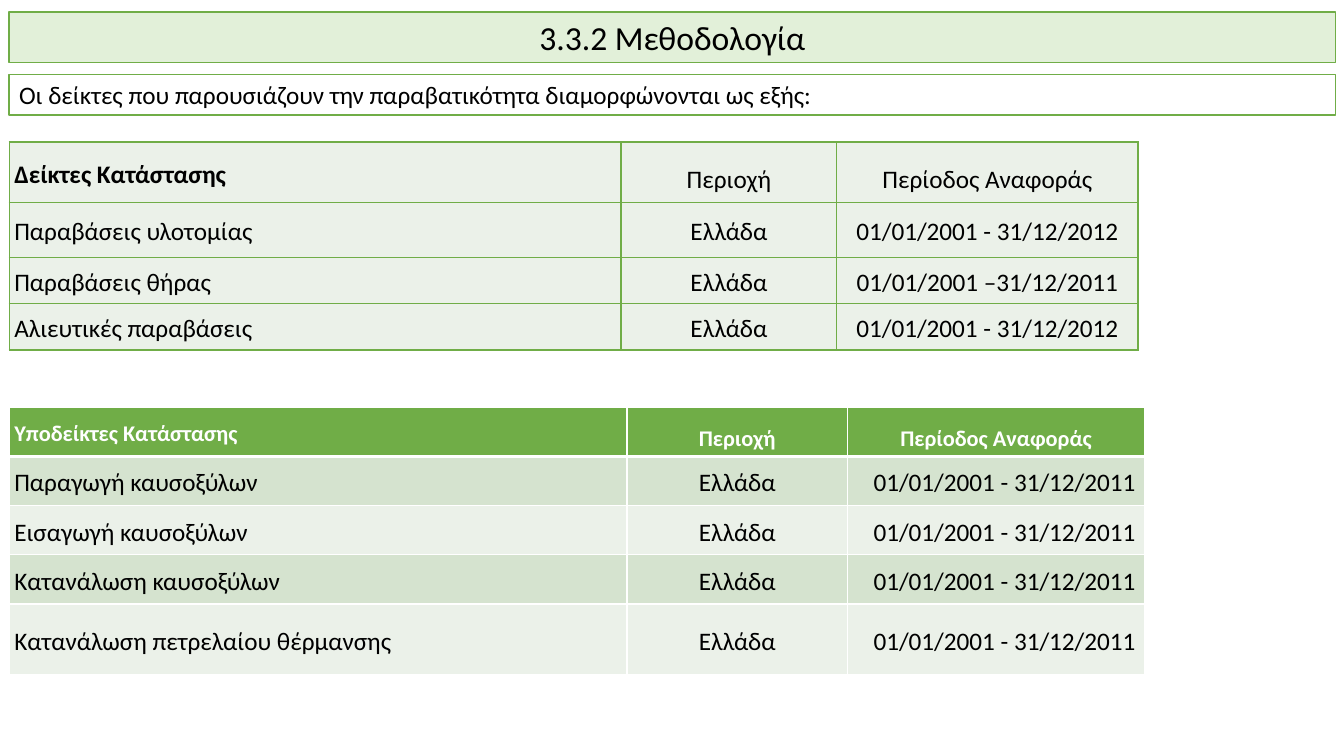
from dataclasses import dataclass

from lxml.etree import SubElement
from pptx import Presentation
from pptx.dml.color import RGBColor as RGB
from pptx.enum.text import MSO_ANCHOR as Anchor, MSO_AUTO_SIZE as AutoSize, PP_ALIGN as Align
from pptx.oxml.ns import qn
from pptx.util import Cm, Pt


@dataclass(frozen=True)
class Theme:
    font: str = "Calibri"
    green: str = "70AD47"
    title_fill: str = "E2F0D9"
    pale: str = "EBF1E9"
    band: str = "D5E3CF"
    white: str = "FFFFFF"
    black: str = "000000"
    title_size: int = 24
    body_size: int = 18
    header_size: int = 16


THEME = Theme()
LEFT = 0.23
CELL_INSET = 0.13


def write(frame, text, size=THEME.body_size, color=THEME.black, bold=False,
          align=Align.LEFT, spacing=None):
    frame.word_wrap = True
    paragraph = frame.paragraphs[0]
    paragraph.alignment = align
    paragraph.line_spacing = spacing
    run = paragraph.add_run()
    run.text = text
    run.font.name = THEME.font
    run.font.size = Pt(size)
    run.font.bold = bold
    run.font.color.rgb = RGB.from_string(color)


def border(cell, side, color, width):
    line = SubElement(cell._tc.get_or_add_tcPr(), qn(f"a:ln{side}"), w=str(Pt(width)))
    fill = SubElement(line, qn("a:solidFill"))
    SubElement(fill, qn("a:srgbClr"), val=color)


class SlideBuilder:
    def __init__(self, theme, deck):
        self.theme = theme
        self.slide = deck.slides.add_slide(deck.slide_layouts[5])

    def banner(self, shape, text, top, height, fill, **style):
        shape.left, shape.top = Cm(LEFT), Cm(top)
        shape.width, shape.height = Cm(33.43), Cm(height)
        shape.fill.solid()
        shape.fill.fore_color.rgb = RGB.from_string(fill)
        shape.line.color.rgb = RGB.from_string(self.theme.green)
        shape.line.width = Pt(1)
        shape.text_frame.auto_size = AutoSize.NONE
        shape.text_frame.vertical_anchor = Anchor.MIDDLE
        write(shape.text_frame, text, **style)

    def title(self, text):
        self.banner(self.slide.shapes.title, text, 0.3, 1.27, self.theme.title_fill,
                    size=self.theme.title_size, align=Align.CENTER)

    def intro(self, text):
        box = self.slide.shapes.add_textbox(0, 0, 0, 0)
        self.banner(box, text, 1.88, 1.02, self.theme.white, align=Align.JUSTIFY)

    def cell(self, cell, text, fill, line, widths, inset, **style):
        for side, width in zip("LRTB", widths):
            border(cell, side, line, width)
        cell.fill.solid()
        cell.fill.fore_color.rgb = RGB.from_string(fill)
        cell.vertical_anchor = Anchor.MIDDLE
        cell.margin_left, cell.margin_right = Cm(inset), Cm(CELL_INSET)
        cell.margin_top = cell.margin_bottom = 0
        write(cell.text_frame, text, **style)

    def table(self, rows, top, columns, heights, fills, line, header,
              rule=1, date_inset=CELL_INSET):
        frame = self.slide.shapes.add_table(
            len(rows), len(columns), Cm(LEFT), Cm(top), Cm(sum(columns)), Cm(sum(heights)))
        table = frame.table
        table.first_row = table.horz_banding = False
        for column, width in zip(table.columns, columns):
            column.width = Cm(width)
        for r, (texts, height, fill) in enumerate(zip(rows, heights, fills)):
            table.rows[r].height = Cm(height)
            widths = (1, 1, rule if r == 1 else 1, rule if r == 0 else 1)
            for c, text in enumerate(texts):
                style = {"align": Align.CENTER if c else Align.LEFT,
                         "spacing": 1.5 if r == 0 and c else 1.15}
                if r == 0:
                    style.update(header, bold=c == 0 or header.get("bold", False))
                inset = date_inset if r and c == 2 else CELL_INSET
                self.cell(table.cell(r, c), text, fill, line, widths, inset, **style)


def main():
    deck = Presentation()
    deck.slide_width, deck.slide_height = Cm(33.87), Cm(19.05)
    builder = SlideBuilder(THEME, deck)
    builder.title("3.3.2 Μεθοδολογία")
    builder.intro("Οι δείκτες που παρουσιάζουν την παραβατικότητα διαμορφώνονται ως εξής:")

    region, period, country = "Περιοχή", "Περίοδος Αναφοράς", "Ελλάδα"
    indicators = [
        ("Δείκτες Κατάστασης", region, period),
        ("Παραβάσεις υλοτομίας", country, "01/01/2001 - 31/12/2012"),
        ("Παραβάσεις θήρας", country, "01/01/2001 –31/12/2011"),
        ("Αλιευτικές παραβάσεις", country, "01/01/2001 - 31/12/2012"),
    ]
    builder.table(indicators, 3.58, (15.42, 5.44, 7.59), (1.53, 1.37, 1.17, 1.17),
                  [THEME.pale] * 4, THEME.green, {})

    fuels = ("Παραγωγή καυσοξύλων", "Εισαγωγή καυσοξύλων", "Κατανάλωση καυσοξύλων",
             "Κατανάλωση πετρελαίου θέρμανσης")
    subindicators = [("Υποδείκτες Κατάστασης", region, period)]
    subindicators += [(fuel, country, "01/01/2001 - 31/12/2011") for fuel in fuels]
    builder.table(subindicators, 10.26, (15.57, 5.56, 7.49), (1.24,) * 4 + (1.78,),
                  [THEME.green] + [THEME.band, THEME.pale] * 2, THEME.white,
                  {"size": THEME.header_size, "color": THEME.white, "bold": True},
                  rule=3, date_inset=0.56)
    deck.save("out.pptx")


if __name__ == "__main__":
    main()
